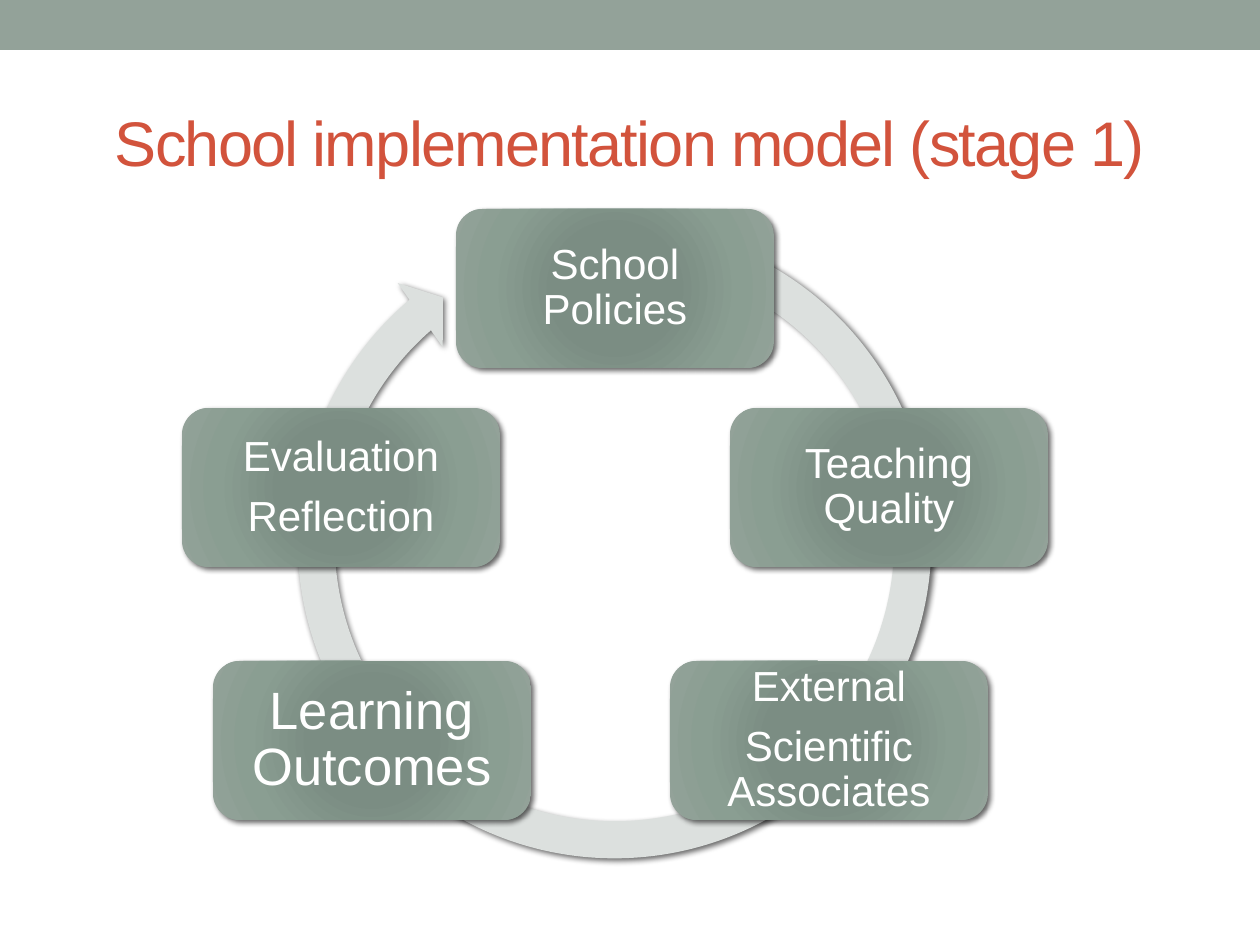
from lxml.etree import SubElement
from pptx import Presentation
from pptx.dml.color import RGBColor
from pptx.enum.shapes import MSO_SHAPE as Shape
from pptx.enum.text import MSO_ANCHOR as Anchor, PP_ALIGN as Align
from pptx.oxml import parse_xml
from pptx.oxml.ns import nsdecls, qn
from pptx.util import Pt

SCALE = 914400 / 126
SAGE, PALE, RUST, WHITE = "93A299", "DCE0DE", "D2533C", "FFFFFF"
STOPS = [(0, "7B8E82"), (34, "7B8D83"), (70, "8A9E92"), (100, SAGE)]
CARD_W, CARD_H = 318, 159
# left and top within the cycle, font size, paragraphs
CARDS = [
    (274, 5, 24, ["School Policies"]),
    (548, 204, 24, ["Teaching Quality"]),
    (488, 457, 24, ["External", "Scientific Associates"]),
    (31, 457, 30, ["Learning Outcomes"]),
    (0, 204, 24, ["Evaluation", "Reflection"]),
]


def px(n):
    return round(n * SCALE)


def rgb(code):
    return RGBColor.from_string(code)


def add(slide, kind, x, y, w, h, color=SAGE):
    shape = slide.shapes.add_shape(kind, px(x), px(y), px(w), px(h))
    shape.shadow.inherit = False
    shape.fill.solid()
    shape.fill.fore_color.rgb = rgb(color)
    shape.line.fill.background()
    return shape


def shade(shape):
    """Give the shape a soft shadow to the lower right."""
    effects = shape._element.spPr.find(qn("a:effectLst"))
    outer = SubElement(effects, qn("a:outerShdw"), blurRad=str(Pt(3)),
                       dist=str(Pt(2)), dir="2700000", rotWithShape="0")
    black = SubElement(outer, qn("a:srgbClr"), val="000000")
    SubElement(black, qn("a:alpha"), val="60000")


def glow(shape):
    """Replace the solid fill by a radial gradient."""
    stops = "".join(
        f'<a:gs pos="{pos * 1000}"><a:srgbClr val="{code}"/></a:gs>'
        for pos, code in STOPS)
    grad = parse_xml(
        f'<a:gradFill {nsdecls("a")} rotWithShape="1"><a:gsLst>{stops}</a:gsLst>'
        '<a:path path="circle"><a:fillToRect l="100000" t="100000" '
        'r="100000" b="100000"/></a:path></a:gradFill>')
    props = shape._element.spPr
    props.replace(props.find(qn("a:solidFill")), grad)


def write(frame, lines, size, color, inset):
    frame.word_wrap = True
    frame.vertical_anchor = Anchor.MIDDLE
    frame.margin_left = frame.margin_right = px(inset)
    frame.margin_top = frame.margin_bottom = px(inset)
    for i, line in enumerate(lines):
        para = frame.add_paragraph() if i else frame.paragraphs[0]
        para.text = line
        para.alignment = Align.CENTER
        para.font.name = "Arial"
        para.font.size = Pt(size)
        para.font.color.rgb = rgb(color)


def title(slide, x, y, w, h):
    box = slide.shapes.add_textbox(px(x), px(y), px(w), px(h))
    write(box.text_frame, ["School implementation model (stage 1)"], 36, RUST, 6)
    run = box.text_frame.paragraphs[0].runs[0]
    run.font._element.set("spc", "-100")


def card(slide, x, y, size, lines):
    shape = add(slide, Shape.ROUNDED_RECTANGLE, x, y, CARD_W, CARD_H)
    glow(shape)
    shade(shape)
    write(shape.text_frame, lines, size, WHITE, size // 2)
    for para in shape.text_frame.paragraphs:
        para.line_spacing = 0.9
        para.space_after = Pt(size * 0.35)


def cycle(slide, x, y):
    ring = add(slide, Shape.CIRCULAR_ARROW, x + 95, y, 675, 675, PALE)
    for i, value in enumerate([0.055, 3.307, 137.624, 173.942, 0.058]):
        ring.adjustments[i] = value
    shade(ring)
    for left, top, size, lines in CARDS:
        card(slide, x + left, y + top, size, lines)


def main():
    deck = Presentation()
    deck.slide_width, deck.slide_height = px(1260), px(945)
    slide = deck.slides.add_slide(deck.slide_layouts[6])
    add(slide, Shape.RECTANGLE, 0, 0, 1260, 50)
    title(slide, 63, 73, 1134, 136)
    cycle(slide, 182, 204)
    deck.save("out.pptx")


if __name__ == "__main__":
    main()
